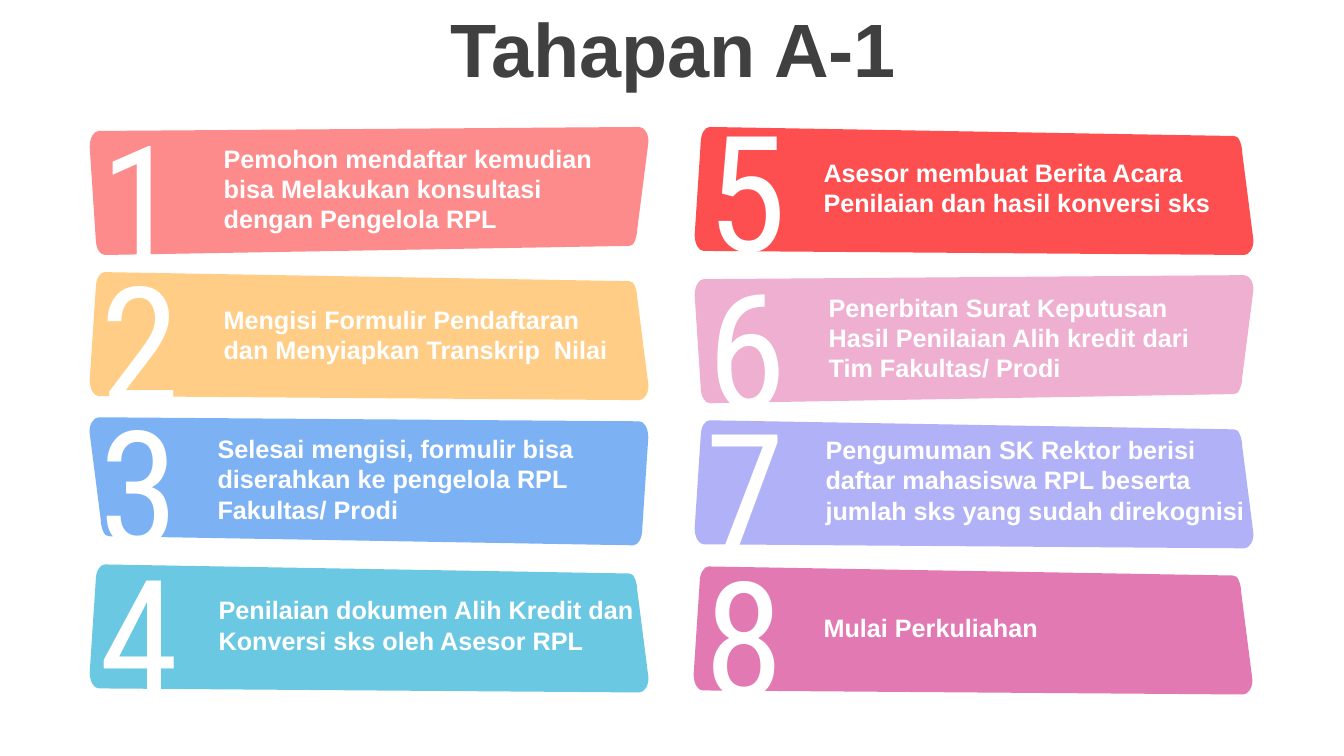
from lxml import etree
from pptx import Presentation
from pptx.dml.color import RGBColor
from pptx.enum.text import MSO_ANCHOR, MSO_AUTO_SIZE, PP_ALIGN
from pptx.oxml.ns import qn
from pptx.util import Inches, Pt

WHITE = RGBColor(0xFF, 0xFF, 0xFF)
DARK_GRAY = RGBColor(0x40, 0x40, 0x40)
SALMON = RGBColor(0xFE, 0x5A, 0x5B)
ORANGE = RGBColor(0xFF, 0xB9, 0x54)
BLUE = RGBColor(0x45, 0x92, 0xEF)
TEAL = RGBColor(0x2C, 0xB2, 0xD7)
RED = RGBColor(0xFD, 0x05, 0x06)
PINK = RGBColor(0xE7, 0x8E, 0xBE)
LAVENDER = RGBColor(0x91, 0x91, 0xF5)
MAGENTA = RGBColor(0xD7, 0x41, 0x92)

CARD_WIDTH, CARD_HEIGHT = 5.54, 1.27
DIGIT_HEIGHT = 2.04
CORNERS = [
    [(0.15, 0), (0.10, 0), (0.06, 0.07), (0.06, 0.16)],
    [(0, 1.07), (0, 1.16), (0.04, 1.23), (0.09, 1.23)],
    [(5.45, 1.27), (5.50, 1.27), (5.55, 1.20), (5.54, 1.11)],
    [(5.43, 0.25), (5.43, 0.19), (5.40, 0.08), (5.35, 0.09)],
]

STEPS = [
    ("1", (0.89, 1.26), SALMON, (False, True), (2.12, 1.37, 4.25, 1.01), (0.9, 0.95, 0.81),
     "Pemohon mendaftar kemudian bisa Melakukan konsultasi dengan Pengelola RPL"),
    ("2", (0.89, 2.7), ORANGE, (False, False), (2.12, 2.97, 4.06, 0.71), (0.9, 2.35, 0.99),
     "Mengisi Formulir Pendaftaran dan Menyiapkan Transkrip  Nilai"),
    ("3", (0.89, 4.14), BLUE, (True, True), (2.06, 4.25, 4.46, 1.01), (0.89, 3.78, 0.99),
     "Selesai mengisi, formulir bisa diserahkan ke pengelola RPL Fakultas/ Prodi"),
    ("4", (0.89, 5.6), TEAL, (False, False), (2.07, 5.85, 4.37, 0.71), (0.89, 5.25, 0.99),
     "Penilaian dokumen Alih Kredit dan Konversi sks oleh Asesor RPL"),
    ("5", (6.89, 1.26), RED, (False, False), (8.07, 1.51, 4.37, 0.71), (6.92, 0.85, 0.99),
     "Asesor membuat Berita Acara Penilaian dan hasil konversi sks"),
    ("6", (6.89, 2.73), PINK, (False, True), (8.12, 2.85, 4.19, 1.01), (6.92, 2.42, 0.99),
     "Penerbitan Surat Keputusan Hasil Penilaian Alih kredit dari Tim Fakultas/ Prodi"),
    ("7", (6.89, 4.17), LAVENDER, (False, False), (8.09, 4.26, 4.57, 1.01), (6.9, 3.81, 0.99),
     "Pengumuman SK Rektor berisi daftar mahasiswa RPL beserta jumlah sks yang sudah direkognisi"),
    ("8", (6.88, 5.62), MAGENTA, (False, False), (8.07, 6.03, 4.57, 0.4), (6.89, 5.27, 0.99),
     "Mulai Perkuliahan"),
]


def add_text(slide, box, text, size, color=WHITE, font="Arial", bold=True, wrap=True):
    shape = slide.shapes.add_textbox(*map(Inches, box))
    frame = shape.text_frame
    frame.word_wrap = wrap
    frame.auto_size = MSO_AUTO_SIZE.SHAPE_TO_FIT_TEXT
    run = frame.paragraphs[0].add_run()
    run.text = text
    run.font.size = Pt(size)
    run.font.name = font
    run.font.bold = bold
    run.font.color.rgb = color
    return frame


def add_title(slide, box):
    frame = add_text(slide, box, "Tahapan A-1", 54, DARK_GRAY)
    frame.auto_size = MSO_AUTO_SIZE.NONE
    frame.vertical_anchor = MSO_ANCHOR.MIDDLE
    paragraph = frame.paragraphs[0]
    paragraph.alignment = PP_ALIGN.CENTER
    paragraph.line_spacing = 0.9
    paragraph.space_before = Pt(10)


def round_corners(shape, corners):
    corner_lines = list(shape._element.iter(qn("a:lnTo")))[::2]
    for line, corner in zip(corner_lines, corners):
        curve = etree.Element(qn("a:cubicBezTo"))
        for x, y in corner[1:]:
            point = etree.SubElement(curve, qn("a:pt"))
            point.set("x", str(Inches(x)))
            point.set("y", str(Inches(y)))
        line.getparent().replace(line, curve)


def add_card(slide, left, top, color, flip):
    flip_x, flip_y = flip
    corners = [[(CARD_WIDTH - x if flip_x else x, CARD_HEIGHT - y if flip_y else y)
                for x, y in corner] for corner in CORNERS]
    points = [(Inches(left + x), Inches(top + y))
              for corner in corners for x, y in (corner[0], corner[-1])]
    builder = slide.shapes.build_freeform(*points[0])
    builder.add_line_segments(points[1:], close=True)
    shape = builder.convert_to_shape()
    round_corners(shape, corners)
    shape.shadow.inherit = False
    shape.line.fill.background()
    shape.fill.solid()
    shape.fill.fore_color.rgb = color
    color_element = shape._element.spPr.find(qn("a:solidFill"))[0]
    etree.SubElement(color_element, qn("a:alpha")).set("val", "70000")


def add_step(slide, number, card, color, flip, text_box, digit_box, wording):
    add_card(slide, *card, color, flip)
    add_text(slide, text_box, wording, 18)
    add_text(slide, (*digit_box, DIGIT_HEIGHT), number, 115,
             font="Roboto Condensed", bold=False, wrap=False)


def main():
    presentation = Presentation()
    presentation.slide_width = Inches(13.33)
    presentation.slide_height = Inches(7.5)
    slide = presentation.slides.add_slide(presentation.slide_layouts[6])
    add_title(slide, (0.35, 0.13, 12.66, 0.79))
    for step in STEPS:
        add_step(slide, *step)
    presentation.save("out.pptx")


if __name__ == "__main__":
    main()
